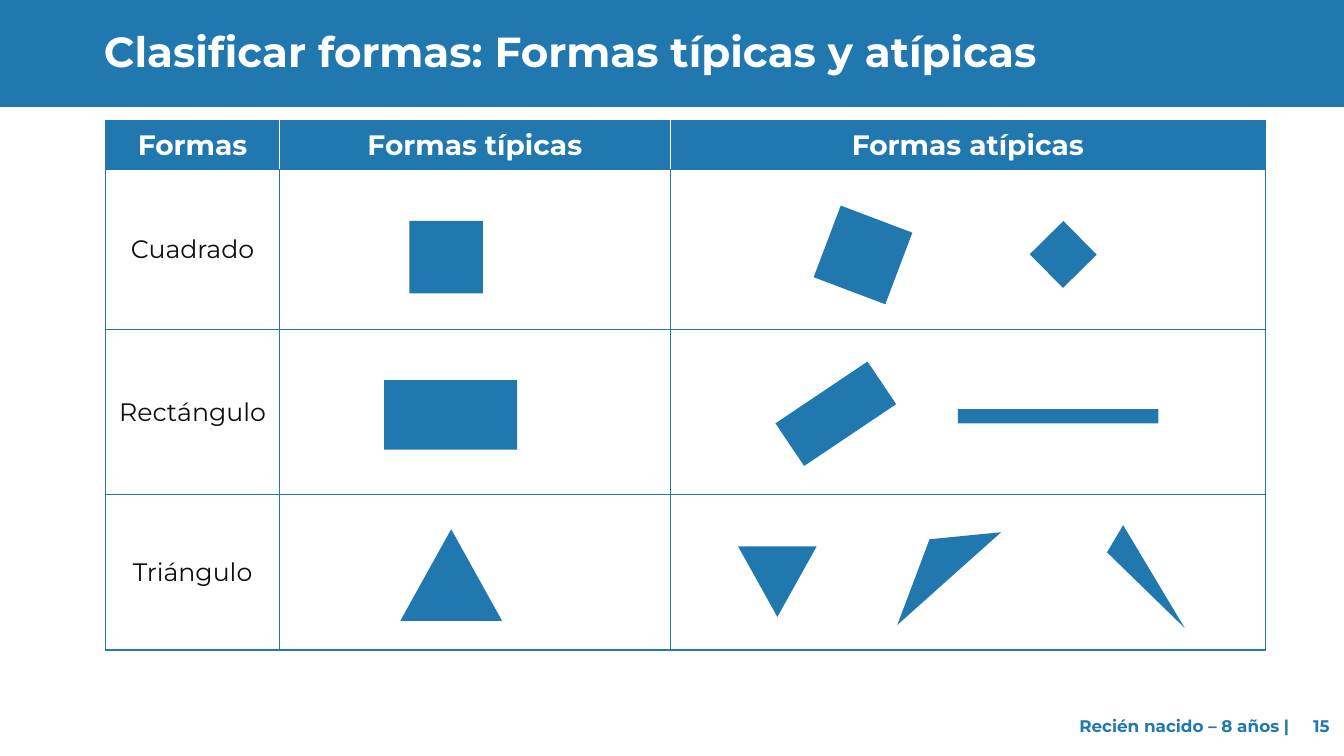
from lxml import etree
from pptx import Presentation
from pptx import util as u
from pptx.dml.color import RGBColor
from pptx.enum import shapes, text
from pptx.oxml import ns

BLUE, WHITE, DARK = "2078AE", "FFFFFF", "140A14"
FONT = "Montserrat"
RECTANGLE = shapes.MSO_SHAPE.RECTANGLE
TRIANGLE = shapes.MSO_SHAPE.ISOSCELES_TRIANGLE

COLUMNS = [1.72, 3.88, 5.9]
ROWS = [0.48, 1.59, 1.64, 1.54]
HEADINGS = ["Formas", "Formas típicas", "Formas atípicas"]
SHAPE_NAMES = ["Cuadrado", "Rectángulo", "Triángulo"]


def color(value):
    return RGBColor.from_string(value)


def write(frame, content, size, ink, bold=False, align=text.PP_ALIGN.LEFT, tabs=()):
    """Write one paragraph, with right-aligned tab stops in inches if given."""
    para = frame.paragraphs[0]
    para.alignment = align
    if tabs:
        stops = etree.SubElement(para._p.get_or_add_pPr(), ns.qn("a:tabLst"))
        for position in tabs:
            etree.SubElement(stops, ns.qn("a:tab"), pos=str(u.Inches(position)), algn="r")
    span = para.add_run()
    span.text = content
    span.font.name = FONT
    span.font.size = u.Pt(size)
    span.font.bold = bold
    span.font.color.rgb = color(ink)
    return para


def paint(shape):
    shape.shadow.inherit = False
    shape.fill.solid()
    shape.fill.fore_color.rgb = color(BLUE)
    shape.line.fill.background()
    return shape


def add_figure(owner, kind, left, top, width, height, turn=0):
    figure = owner.shapes.add_shape(kind, *map(u.Inches, (left, top, width, height)))
    figure.rotation = turn
    return paint(figure)


def add_polygon(owner, points):
    corners = [(u.Inches(x), u.Inches(y)) for x, y in points]
    builder = owner.shapes.build_freeform(*corners[0], scale=1.0)
    builder.add_line_segments(corners[1:], close=True)
    return paint(builder.convert_to_shape())


def set_borders(cell, **sides):
    """Give each side (L, R, T, B) a one-point line in its colour."""
    properties = cell._tc.get_or_add_tcPr()
    for index, (side, ink) in enumerate(sides.items()):
        line = etree.Element(ns.qn(f"a:ln{side}"), w=str(u.Pt(1)))
        fill = etree.SubElement(line, ns.qn("a:solidFill"))
        etree.SubElement(fill, ns.qn("a:srgbClr"), val=ink)
        properties.insert(index, line)


def add_header(page):
    title = page.shapes.title
    title.left, title.top = u.Inches(0.93), u.Inches(0.26)
    title.width, title.height = u.Inches(11.85), u.Inches(0.56)
    title.text_frame.vertical_anchor = text.MSO_ANCHOR.MIDDLE
    para = write(title.text_frame, "Clasificar formas: Formas típicas y atípicas",
                 30, WHITE, bold=True)
    para.line_spacing = 0.9
    # The band lies behind the title
    band = add_figure(page, RECTANGLE, 0, 0, 13.33, 1.06)
    title.element.addprevious(band.element)


def add_footer(page):
    box = page.shapes.add_textbox(*map(u.Inches, (9.49, 7, 3.81, 0.4)))
    box.text_frame.word_wrap = True
    box.text_frame.vertical_anchor = text.MSO_ANCHOR.MIDDLE
    write(box.text_frame, "\tRecién nacido – 8 años |\t15", 12, BLUE,
          bold=True, tabs=(3.2, 3.6))


def add_shape_table(page):
    frame = page.shapes.add_table(len(ROWS), len(COLUMNS), u.Inches(1.05), u.Inches(1.2),
                                  u.Inches(sum(COLUMNS)), u.Inches(sum(ROWS)))
    table = frame.table
    table.horz_banding = False
    for column, width in zip(table.columns, COLUMNS):
        column.width = u.Inches(width)
    for row, height in zip(table.rows, ROWS):
        row.height = u.Inches(height)

    contents = [HEADINGS] + [[name, "", ""] for name in SHAPE_NAMES]
    last = len(COLUMNS) - 1
    for r, labels in enumerate(contents):
        heading = r == 0
        inner = WHITE if heading else BLUE
        for c, label in enumerate(labels):
            cell = table.cell(r, c)
            cell.vertical_anchor = text.MSO_ANCHOR.MIDDLE
            cell.fill.solid()
            cell.fill.fore_color.rgb = color(BLUE if heading else WHITE)
            set_borders(cell, L=inner if c > 0 else BLUE,
                        R=inner if c < last else BLUE, T=BLUE, B=BLUE)
            if label:
                write(cell.text_frame, label, 20 if heading else 18,
                      WHITE if heading else DARK, bold=heading,
                      align=text.PP_ALIGN.CENTER)


def add_typical_shapes(page):
    add_figure(page, RECTANGLE, 4.06, 2.19, 0.73, 0.72)
    add_figure(page, RECTANGLE, 3.81, 3.77, 1.32, 0.69)
    add_figure(page, TRIANGLE, 3.97, 5.25, 1.01, 0.91)


def add_atypical_shapes(page):
    squares = page.shapes.add_group_shape()
    add_figure(squares, RECTANGLE, 10.31, 2.29, 0.47, 0.47, turn=45.4)
    add_figure(squares, RECTANGLE, 8.18, 2.15, 0.76, 0.76, turn=20.7)

    rectangles = page.shapes.add_group_shape()
    add_figure(rectangles, RECTANGLE, 9.5, 4.06, 1.99, 0.14)
    add_figure(rectangles, RECTANGLE, 7.74, 3.85, 1.1, 0.51, turn=326.1)

    triangles = page.shapes.add_group_shape()
    add_polygon(triangles, [(9.93, 5.28), (8.9, 6.2), (9.22, 5.35)])
    add_figure(triangles, TRIANGLE, 7.32, 5.42, 0.78, 0.7, turn=180)
    add_polygon(triangles, [(11.14, 5.21), (11.75, 6.23), (10.98, 5.48)])


def main():
    deck = Presentation()
    deck.slide_width, deck.slide_height = u.Inches(13.33), u.Inches(7.5)
    page = deck.slides.add_slide(deck.slide_layouts.get_by_name("Title Only"))
    add_header(page)
    add_footer(page)
    add_shape_table(page)
    add_typical_shapes(page)
    add_atypical_shapes(page)
    deck.save("out.pptx")


if __name__ == "__main__":
    main()
